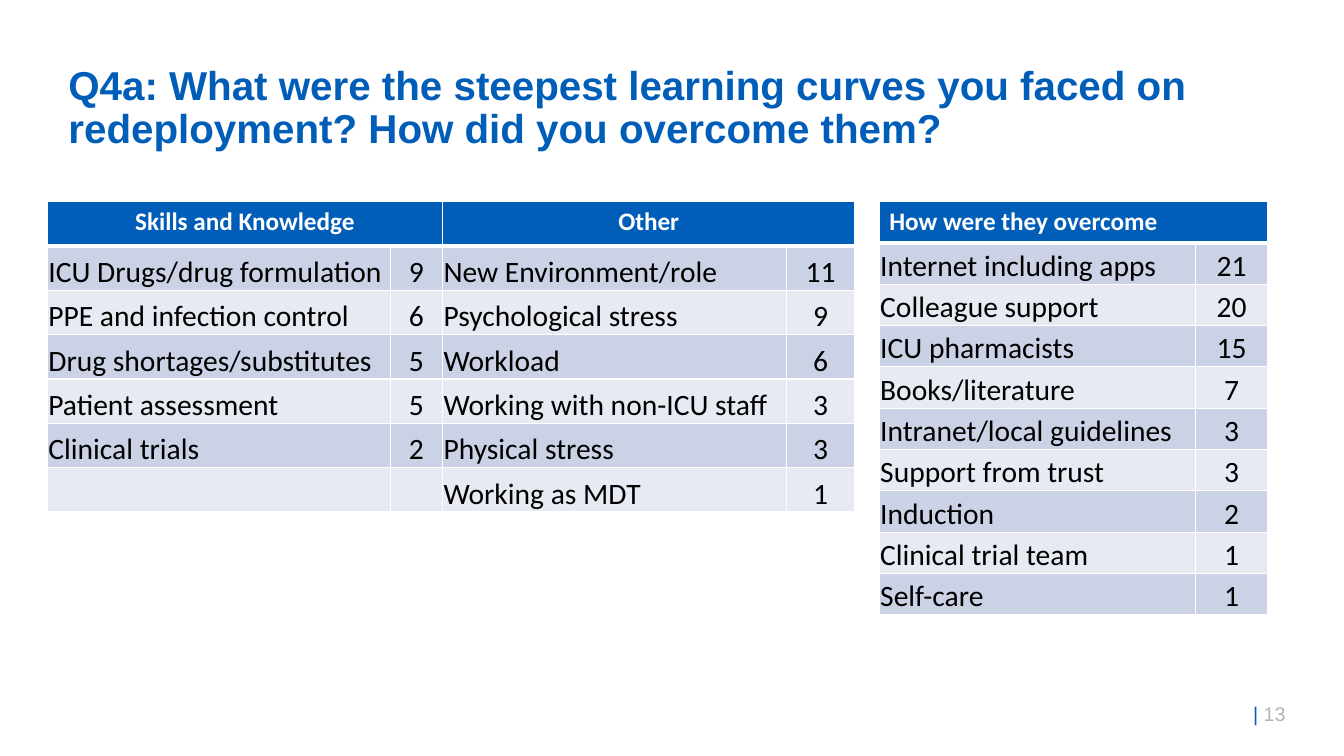
from dataclasses import dataclass

from lxml.etree import SubElement
from pptx import Presentation
from pptx.dml.color import RGBColor
from pptx.enum.text import MSO_ANCHOR as Anchor, PP_ALIGN as Align
from pptx.oxml.ns import qn
from pptx.util import Inches, Pt

BLUE, GREY, WHITE, BLACK = "005EB8", "ADB6BE", "FFFFFF", "000000"
BANDS = ("CCD2E6", "E7EAF3")


@dataclass
class Grid:
    left: float
    row: float
    cols: list[float]
    heads: list[str]
    align: Align
    rows: list[tuple[str, ...]]


GRIDS = [
    Grid(0.47, 0.44, [3.4, 0.52, 3.41, 0.68],
         ["Skills and Knowledge", "Other"], Align.CENTER, [
        ("ICU Drugs/drug formulation", "9", "New Environment/role", "11"),
        ("PPE and infection control", "6", "Psychological stress", "9"),
        ("Drug shortages/substitutes", "5", "Workload", "6"),
        ("Patient assessment", "5", "Working with non-ICU staff", "3"),
        ("Clinical trials", "2", "Physical stress", "3"),
        ("", "", "Working as MDT", "1"),
    ]),
    Grid(8.72, 0.41, [3.14, 0.71],
         ["How were they overcome"], Align.LEFT, [
        ("Internet including apps", "21"),
        ("Colleague support", "20"),
        ("ICU pharmacists", "15"),
        ("Books/literature", "7"),
        ("Intranet/local guidelines", "3"),
        ("Support from trust", "3"),
        ("Induction", "2"),
        ("Clinical trial team", "1"),
        ("Self-care", "1"),
    ]),
]


def color(code: str) -> RGBColor:
    return RGBColor.from_string(code)


def style(font, name: str, size: float, code: str, bold: bool = False) -> None:
    font.name, font.size, font.bold = name, Pt(size), bold
    font.color.rgb = color(code)


def paint(cell, code: str, top: float, base: float) -> None:
    """Give a cell white borders and a solid fill."""
    props = cell._tc.get_or_add_tcPr()
    for side, width in zip("LRTB", (1, 1, top, base)):
        line = SubElement(props, qn(f"a:ln{side}"), w=str(Pt(width)))
        fill = SubElement(line, qn("a:solidFill"))
        SubElement(fill, qn("a:srgbClr"), val=WHITE)
    cell.fill.solid()
    cell.fill.fore_color.rgb = color(code)


def write(cell, text: str, align: Align, size: float, code: str, bold: bool) -> None:
    cell.text = text
    par = cell.text_frame.paragraphs[0]
    par.alignment = align
    style(par.font, "Calibri", size, code, bold)


def draw(slide, grid: Grid) -> None:
    count = len(grid.rows) + 1
    table = slide.shapes.add_table(
        count, len(grid.cols), Inches(grid.left), Inches(2),
        Inches(sum(grid.cols)), Inches(grid.row * count)).table
    for col, width in zip(table.columns, grid.cols):
        col.width = Inches(width)
    for row in table.rows:
        row.height = Inches(grid.row)

    for c in range(len(grid.cols)):
        paint(table.cell(0, c), BLUE, 1, 3)
    for i, head in enumerate(grid.heads):
        cell = table.cell(0, 2 * i)
        cell.merge(table.cell(0, 2 * i + 1))
        write(cell, head, grid.align, 18, WHITE, True)

    for r, row in enumerate(grid.rows, 1):
        for c, text in enumerate(row):
            cell = table.cell(r, c)
            paint(cell, BANDS[(r - 1) % 2], 3 if r == 1 else 1, 1)
            cell.vertical_anchor = Anchor.BOTTOM
            cell.margin_left = cell.margin_right = cell.margin_top = Inches(0.01)
            cell.margin_bottom = 0
            write(cell, text, Align.CENTER if c % 2 else Align.LEFT, 21.1, BLACK, False)


def add_box(slide, left: float, top: float, width: float, height: float):
    """Add a wrapping text box and return its first paragraph."""
    frame = slide.shapes.add_textbox(
        Inches(left), Inches(top), Inches(width), Inches(height)).text_frame
    frame.word_wrap = True
    return frame.paragraphs[0]


def main() -> None:
    deck = Presentation()
    deck.slide_width, deck.slide_height = Inches(13.33), Inches(7.5)
    slide = deck.slides.add_slide(deck.slide_layouts[6])

    number = add_box(slide, 12.33, 6.91, 0.94, 0.34)
    for text, code in (("| ", BLUE), ("13", GREY)):
        run = number.add_run()
        run.text = text
        style(run.font, "Arial", 14.1, code)

    title = add_box(slide, 0.58, 0.6, 12.18, 0.67)
    title.text = ("Q4a: What were the steepest learning curves you faced on "
                  "redeployment? How did you overcome them?")
    title.line_spacing = 0.9
    style(title.font, "Arial", 28.8, BLUE, True)

    for grid in GRIDS:
        draw(slide, grid)
    deck.save("out.pptx")


if __name__ == "__main__":
    main()
